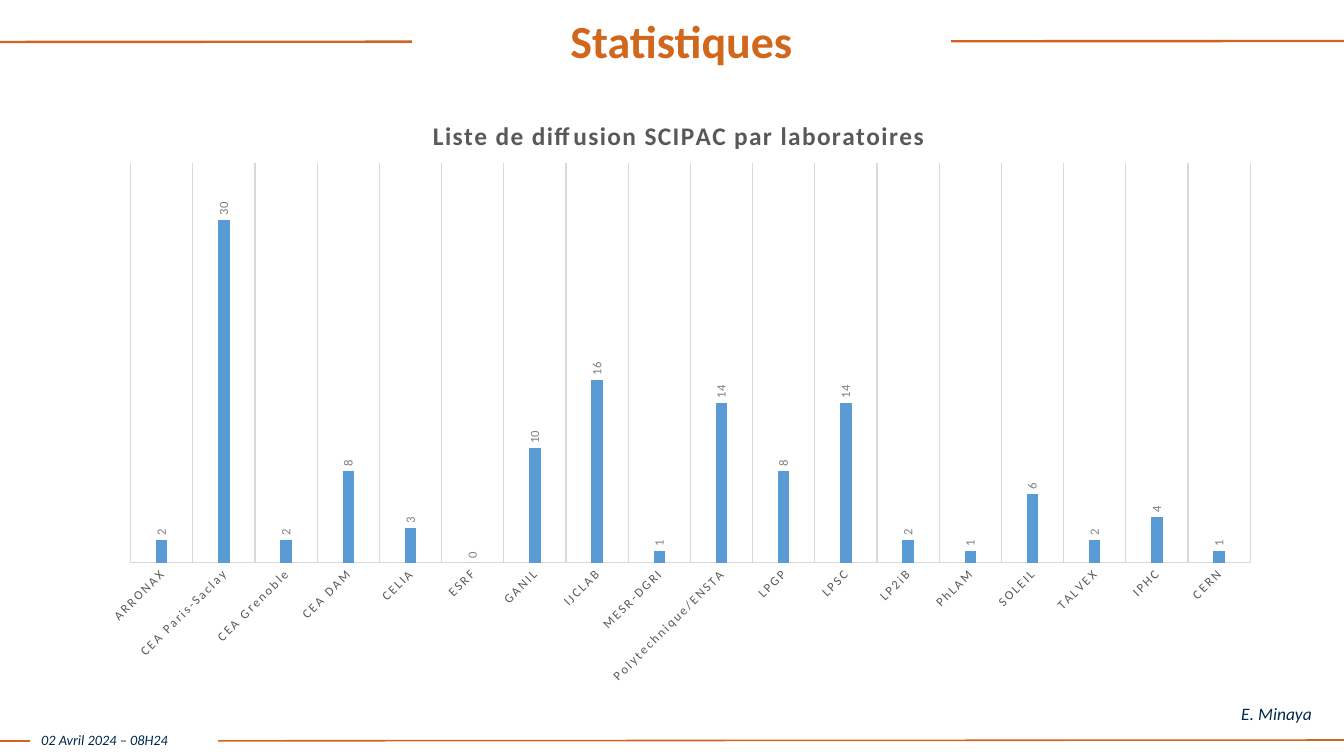
from lxml.etree import SubElement
from pptx import Presentation
from pptx.chart.data import CategoryChartData
from pptx.dml.color import RGBColor
from pptx.enum.chart import XL_CHART_TYPE as CT, XL_LABEL_POSITION as LP
from pptx.enum.chart import XL_TICK_MARK as TM
from pptx.enum.shapes import MSO_CONNECTOR
from pptx.enum.text import MSO_ANCHOR, PP_ALIGN
from pptx.oxml import parse_xml
from pptx.oxml.ns import nsdecls, qn
from pptx.util import Pt

PX = 8014  # EMU per px
WIDTH, HEIGHT = 1344, 756
FONT = "Calibri"
ORANGE, NAVY, GREY, GRID = "D06423", "00294B", "595959", "D9D9D9"

# y at right, y at left, line width
RULES = [(740, 741, 1), (41, 42, 1.5)]
# text, box, size, colour, bold, alignment, white background, wrap
TITLE = ("Statistiques", (412, 0, 539, 81), 29, "D0671C", True, PP_ALIGN.CENTER, True, True)
AUTHOR = ("E. Minaya", (1230, 697, 94, 33), 11, NAVY, False, PP_ALIGN.LEFT, False, False)
DATE = ("02 Avril 2024 – 08H24", (30, 723, 188, 33), 9, NAVY, False, PP_ALIGN.LEFT, True, True)

CHART_TITLE = "Liste de diffusion SCIPAC par laboratoires"
CHART_BOX = (88, 90, 1186, 607)
PLOT_BOX = (131, 163, 1119, 400)
CHART_TITLE_AT = (428, 114)
MEMBERS = {
    "ARRONAX": 2, "CEA Paris-Saclay": 30, "CEA Grenoble": 2, "CEA DAM": 8,
    "CELIA": 3, "ESRF": 0, "GANIL": 10, "IJCLAB": 16, "MESR-DGRI": 1,
    "Polytechnique/ENSTA": 14, "LPGP": 8, "LPSC": 14, "LP2iB": 2,
    "PhLAM": 1, "SOLEIL": 6, "TALVEX": 2, "IPHC": 4, "CERN": 1,
}


def rgb(hex_string):
    return RGBColor.from_string(hex_string)


def emu(*lengths):
    return [n * PX for n in lengths]


def style(font, size, color, bold=False, italic=False):
    font.name, font.size = FONT, Pt(size)
    font.bold, font.italic = bold, italic
    font.color.rgb = rgb(color)


def style_line(line, color, width):
    line.color.rgb = rgb(color)
    line.width = Pt(width)


def add_rule(slide, y_right, y_left, width):
    s = slide.shapes.add_connector(MSO_CONNECTOR.STRAIGHT, *emu(WIDTH, y_right, 0, y_left))
    style_line(s.line, ORANGE, width)
    SubElement(s._element.spPr, qn("a:effectLst"))


def add_label(slide, text, box, size, color, bold, align, filled, wrap):
    s = slide.shapes.add_textbox(*emu(*box))
    if filled:
        s.fill.solid()
        s.fill.fore_color.rgb = rgb("FFFFFF")
    tf = s.text_frame
    tf.word_wrap = wrap
    tf.vertical_anchor = MSO_ANCHOR.MIDDLE if filled else MSO_ANCHOR.TOP
    p = tf.paragraphs[0]
    p.text, p.alignment = text, align
    style(p.font, size, color, bold, italic=not bold)


def set_layout(parent, index, left, top, size=None):
    """Place a chart part, given in slide px, as fractions of the chart box."""
    for old in parent.findall(qn("c:layout")):
        parent.remove(old)
    x, y, w, h = CHART_BOX
    parts = [("xMode", "edge"), ("yMode", "edge"),
             ("x", round((left - x) / w, 3)), ("y", round((top - y) / h, 3))]
    if size:
        parts.insert(0, ("layoutTarget", "inner"))
        parts += [("w", round(size[0] / w, 3)), ("h", round(size[1] / h, 3))]
    body = "".join(f'<c:{tag} val="{val}"/>' for tag, val in parts)
    parent.insert(index, parse_xml(
        f'<c:layout {nsdecls("c")}><c:manualLayout>{body}</c:manualLayout></c:layout>'))


def rotate(element, degrees):
    body = next(element.iter(qn("a:bodyPr")))
    body.set("rot", str(degrees * 60000))
    body.set("vert", "horz")


def add_members_chart(slide):
    data = CategoryChartData()
    data.categories = list(MEMBERS)
    data.add_series("Series 1", list(MEMBERS.values()))
    chart = slide.shapes.add_chart(CT.COLUMN_CLUSTERED, *emu(*CHART_BOX), data).chart
    style(chart.font, 10, "000000")
    chart.has_legend = False

    title = chart.chart_title
    r = title.text_frame.paragraphs[0].add_run()
    r.text = CHART_TITLE
    style(r.font, 16, GREY, bold=True)
    next(title._element.iter(qn("a:rPr"))).set("spc", "100")
    set_layout(title._element, 1, *CHART_TITLE_AT)

    cat = chart.category_axis
    cat.major_tick_mark = cat.minor_tick_mark = TM.NONE
    cat.has_major_gridlines = True
    for line in (cat.format.line, cat.major_gridlines.format.line):
        style_line(line, GRID, 0.75)
    style(cat.tick_labels.font, 8, GREY)
    rotate(cat._element, -45)
    next(cat._element.iter(qn("a:defRPr"))).set("spc", "120")

    val = chart.value_axis
    val.minimum_scale, val.maximum_scale = 0, 35
    val.has_major_gridlines = False
    val.visible = False

    plot = chart.plots[0]
    plot.gap_width, plot.overlap, plot.vary_by_categories = 444, -90, False
    fill = plot.series[0].format.fill
    fill.solid()
    fill.fore_color.rgb = rgb("5B9BD5")
    plot.has_data_labels = True
    labels = plot.data_labels
    labels.show_value, labels.position = True, LP.OUTSIDE_END
    style(labels.font, 8, "808080")
    rotate(labels._element, -90)
    plot_area = next(chart._chartSpace.iter(qn("c:plotArea")))
    set_layout(plot_area, 0, *PLOT_BOX[:2], size=PLOT_BOX[2:])


def main():
    prs = Presentation()
    prs.slide_width, prs.slide_height = emu(WIDTH, HEIGHT)
    slide = prs.slides.add_slide(prs.slide_layouts[6])
    for rule in RULES:
        add_rule(slide, *rule)
    for label in (TITLE, AUTHOR, DATE):
        add_label(slide, *label)
    add_members_chart(slide)
    prs.save("out.pptx")


if __name__ == "__main__":
    main()
